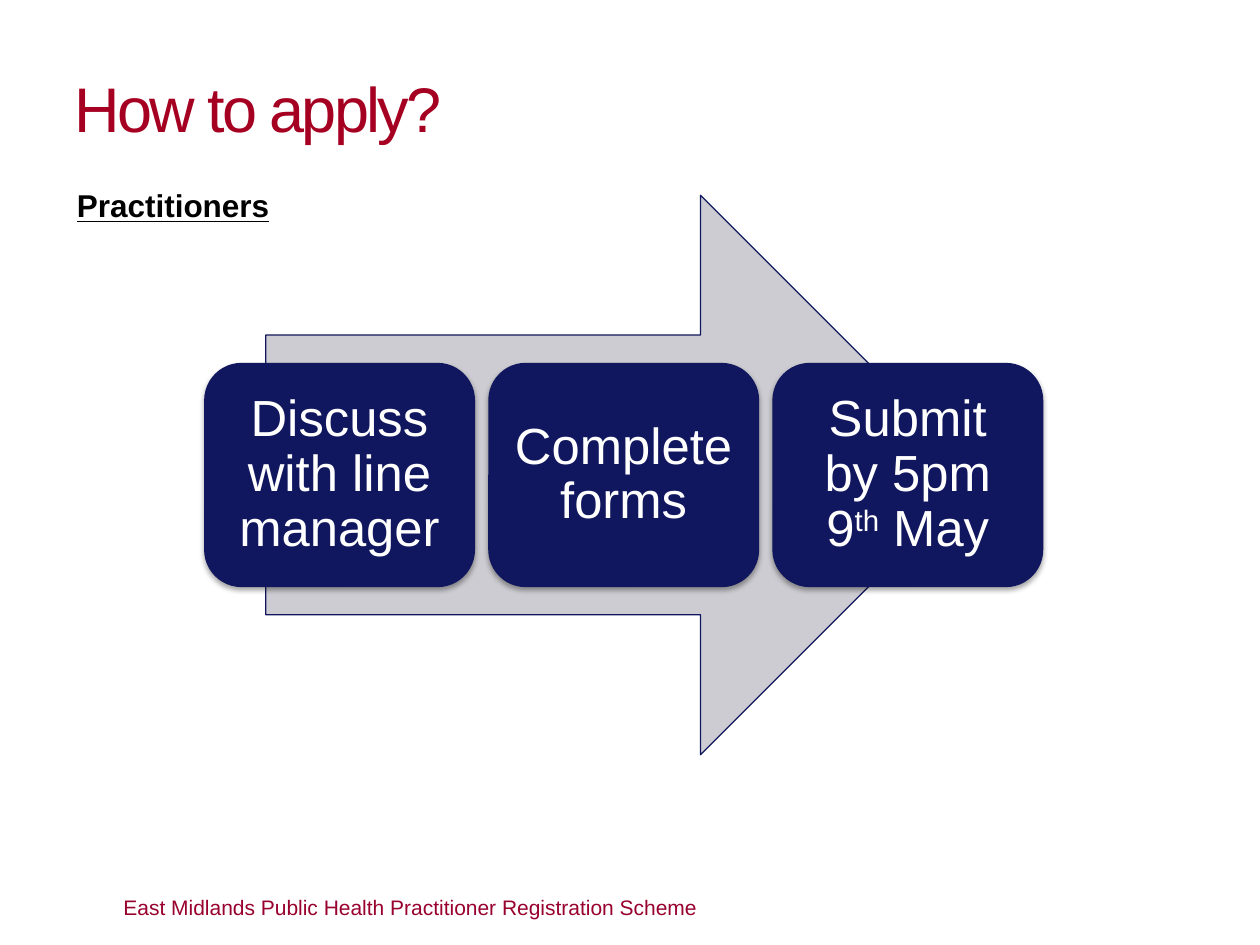
from dataclasses import dataclass

from lxml import etree
from pptx import Presentation
from pptx.dml.color import RGBColor
from pptx.enum.shapes import MSO_SHAPE as Preset
from pptx.enum.text import MSO_ANCHOR as Anchor, PP_ALIGN as Align
from pptx.oxml.ns import qn
from pptx.slide import Slide
from pptx.util import Inches, Pt

CRIMSON = RGBColor(0xA5, 0x00, 0x21)
BURGUNDY = RGBColor(0x98, 0x00, 0x2E)
NAVY = RGBColor(0x11, 0x17, 0x5E)
SILVER = RGBColor(0xCC, 0xCC, 0xD2)
BLACK = RGBColor(0x00, 0x00, 0x00)
WHITE = RGBColor(0xFF, 0xFF, 0xFF)

CELL = 0.1
CARD_WIDTH, CARD_HEIGHT, CARD_PITCH = 21.5, 17.8, 22.55
STEPS = [
    [("Discuss with line manager", 0)],
    [("Complete forms", 0)],
    [("Submit by 5pm 9", 0), ("th", 30), (" May", 0)],
]


def write_text(shape, runs, size, color, bold=False, underline=False, spacing=0,
               align=Align.LEFT, anchor=Anchor.TOP, margin=0, line_spacing=1.0):
    frame = shape.text_frame
    frame.word_wrap = True
    frame.vertical_anchor = anchor
    frame.margin_left = frame.margin_right = Inches(margin)
    frame.margin_top = frame.margin_bottom = Inches(margin)
    paragraph = frame.paragraphs[0]
    paragraph.alignment = align
    paragraph.line_spacing = line_spacing
    for text, raised in runs:
        run = paragraph.add_run()
        run.text = text
        font = run.font
        font.name, font.size, font.bold, font.underline = "Arial", Pt(size), bold, underline
        font.color.rgb = color
        properties = run._r.get_or_add_rPr()
        if raised:
            properties.set("baseline", str(raised * 1000))
        if spacing:
            properties.set("spc", str(int(spacing * 100)))


def add_soft_shadow(shape):
    effects = shape._element.spPr.find(qn("a:effectLst"))
    shadow = etree.SubElement(effects, qn("a:outerShdw"), blurRad=str(Pt(3.1)),
                              dist=str(Pt(1.8)), dir="5400000", rotWithShape="0")
    color = etree.SubElement(shadow, qn("a:srgbClr"), val="000000")
    etree.SubElement(color, qn("a:alpha"), val="35000")


@dataclass
class SlideBuilder:
    slide: Slide

    def area(self, *cells):
        return [Inches(cell * CELL) for cell in cells]

    def title(self, text, *cells):
        shape = self.slide.shapes.title
        shape.left, shape.top, shape.width, shape.height = self.area(*cells)
        write_text(shape, [(text, 0)], 36, CRIMSON, spacing=-1.5, anchor=Anchor.BOTTOM)

    def label(self, text, *cells, **style):
        write_text(self.slide.shapes.add_textbox(*self.area(*cells)), [(text, 0)], **style)

    def block(self, preset, fill, *cells, line=None):
        shape = self.slide.shapes.add_shape(preset, *self.area(*cells))
        shape.shadow.inherit = False
        shape.fill.solid()
        shape.fill.fore_color.rgb = fill
        if line is None:
            shape.line.fill.background()
        else:
            shape.line.color.rgb = line
            shape.line.width = Pt(0.75)
        return shape

    def card(self, runs, left, top):
        shape = self.block(Preset.ROUNDED_RECTANGLE, NAVY, left, top, CARD_WIDTH, CARD_HEIGHT)
        add_soft_shadow(shape)
        write_text(shape, runs, 29, WHITE, align=Align.CENTER, anchor=Anchor.MIDDLE,
                   margin=0.12, line_spacing=0.9)


def main():
    presentation = Presentation()
    presentation.slide_width, presentation.slide_height = Inches(10), Inches(7.5)
    layout = presentation.slide_layouts.get_by_name("Title Only")
    builder = SlideBuilder(presentation.slides.add_slide(layout))

    builder.title("How to apply?", 5.9, 5.2, 87.8, 6.3)
    builder.label("Practitioners", 6.1, 14.8, 87.8, 3, size=18, color=BLACK,
                  bold=True, underline=True)
    builder.label("East Midlands Public Health Practitioner Registration Scheme",
                  9.8, 69, 84.3, 6, size=12, color=BURGUNDY, anchor=Anchor.MIDDLE)
    builder.block(Preset.RIGHT_ARROW, SILVER, 21.1, 15.5, 56.7, 44.4, line=NAVY)
    for index, runs in enumerate(STEPS):
        builder.card(runs, 16.2 + index * CARD_PITCH, 28.8)

    presentation.save("out.pptx")


if __name__ == "__main__":
    main()
